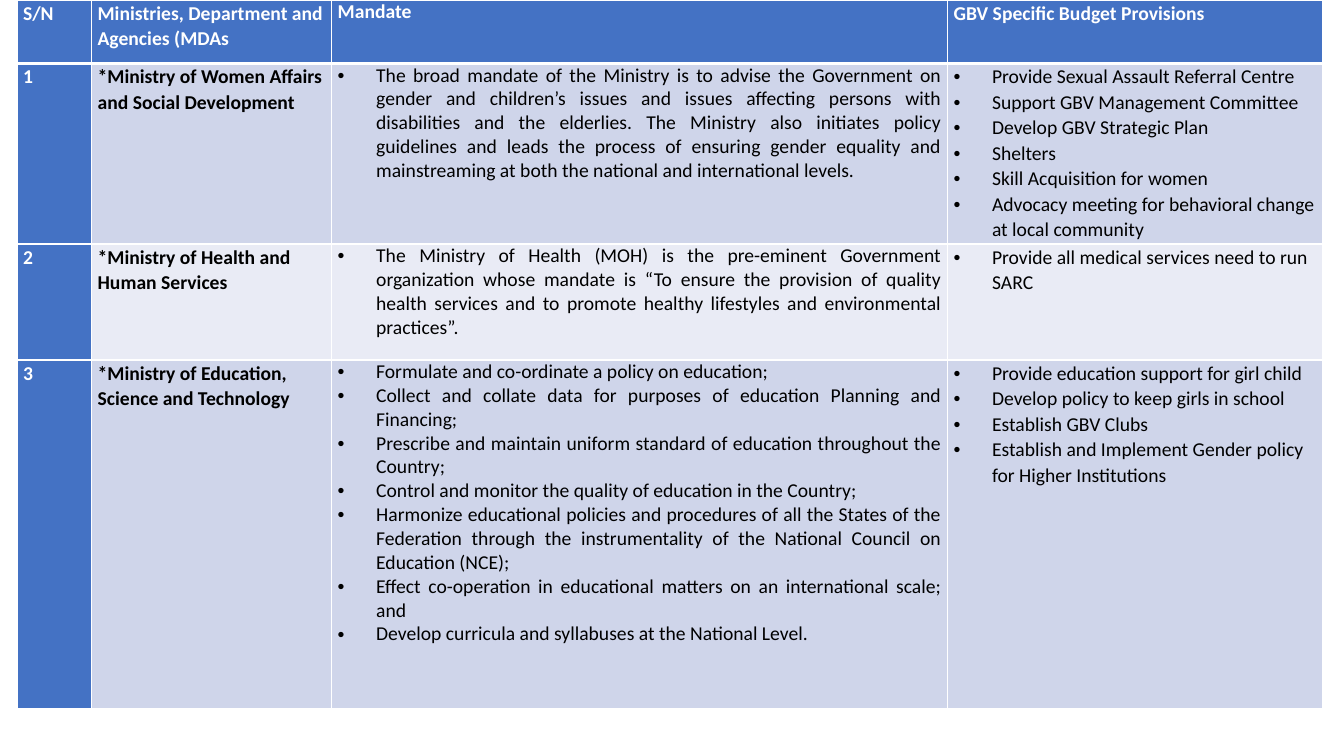
from lxml import etree
from pptx import Presentation
from pptx import util as u
from pptx.dml.color import RGBColor
from pptx.enum import text
from pptx.oxml import ns

WHITE = RGBColor(0xFF, 0xFF, 0xFF)
BLACK = RGBColor(0, 0, 0)
BLUE = RGBColor(0x44, 0x72, 0xC4)
BANDS = [RGBColor(0xCF, 0xD5, 0xEA), RGBColor(0xE9, 0xEB, 0xF5)]

COLUMN_WIDTHS = [1.88, 6.05, 15.52, 9.45]
ROW_HEIGHTS = [1.6, 4.55, 2.92, 8.79]
MANDATE_COLUMN = 2

HEADINGS = ["S/N", "Ministries, Department and Agencies (MDAs", "Mandate",
            "GBV Specific Budget Provisions"]
MINISTRIES = [
    ("*Ministry of Women Affairs and Social Development",
     ["The broad mandate of the Ministry is to advise the Government on gender and "
      "children’s issues and issues affecting persons with disabilities and the elderlies. "
      "The Ministry also initiates policy guidelines and leads the process of ensuring "
      "gender equality and mainstreaming at both the national and international levels."],
     ["Provide Sexual Assault Referral Centre",
      "Support GBV Management Committee",
      "Develop GBV Strategic Plan",
      "Shelters",
      "Skill Acquisition for women",
      "Advocacy meeting for behavioral change at local community"]),
    ("*Ministry of Health and Human Services",
     ["The Ministry of Health (MOH) is the pre-eminent Government organization whose "
      "mandate is “To ensure the provision of quality health services and to promote "
      "healthy lifestyles and environmental practices”."],
     ["Provide all medical services need to run SARC"]),
    ("*Ministry of Education, Science and Technology",
     ["Formulate and co-ordinate a policy on education;",
      "Collect and collate data for purposes of education Planning and Financing;",
      "Prescribe and maintain uniform standard of education throughout the Country;",
      "Control and monitor the quality of education in the Country;",
      "Harmonize educational policies and procedures of all the States of the Federation "
      "through the instrumentality of the National Council on Education (NCE);",
      "Effect co-operation in educational matters on an international scale; and",
      "Develop curricula and syllabuses at the National Level."],
     ["Provide education support for girl child",
      "Develop policy to keep girls in school",
      "Establish GBV Clubs",
      "Establish and Implement Gender policy for Higher Institutions"]),
]


def add_borders(cell, bottom_width):
    properties = cell._tc.get_or_add_tcPr()
    for side, width in (("L", 1), ("R", 1), ("T", 1), ("B", bottom_width)):
        line = etree.SubElement(properties, ns.qn(f"a:ln{side}"), w=str(u.Pt(width)))
        fill = etree.SubElement(line, ns.qn("a:solidFill"))
        etree.SubElement(fill, ns.qn("a:srgbClr"), val=str(WHITE))


def add_bullet(para):
    properties = para._p.get_or_add_pPr()
    properties.set("marL", str(u.Cm(0.97)))
    properties.set("indent", str(-u.Cm(0.97)))
    etree.SubElement(properties, ns.qn("a:buFont"), typeface="Arial")
    etree.SubElement(properties, ns.qn("a:buChar"), char="•")


def fill_cell(cell, lines, fill, color, bold, justified, bulleted, bottom_width):
    add_borders(cell, bottom_width)
    cell.fill.solid()
    cell.fill.fore_color.rgb = fill
    cell.margin_left = cell.margin_right = u.Cm(0.15)
    cell.margin_top = cell.margin_bottom = 0
    frame = cell.text_frame
    for index, line in enumerate(lines):
        para = frame.add_paragraph() if index else frame.paragraphs[0]
        if justified:
            para.alignment = text.PP_ALIGN.JUSTIFY
        else:
            para.line_spacing = 1.07
            para.space_after = u.Pt(8 if index == len(lines) - 1 else 0)
        if bulleted:
            add_bullet(para)
        span = para.add_run()
        span.text = line
        span.font.name = "Calibri"
        span.font.size = u.Pt(14)
        span.font.bold = bold
        span.font.color.rgb = color


def add_ministry_table(page):
    frame = page.shapes.add_table(len(ROW_HEIGHTS), len(COLUMN_WIDTHS), u.Cm(0.43), 0,
                                  u.Cm(sum(COLUMN_WIDTHS)), u.Cm(sum(ROW_HEIGHTS)))
    table = frame.table
    for column, width in zip(table.columns, COLUMN_WIDTHS):
        column.width = u.Cm(width)
    for row, height in zip(table.rows, ROW_HEIGHTS):
        row.height = u.Cm(height)

    contents = [[[heading] for heading in HEADINGS]]
    for number, (name, mandate, provisions) in enumerate(MINISTRIES, 1):
        contents.append([[str(number)], [name], mandate, provisions])

    for row, cells in enumerate(contents):
        for column, lines in enumerate(cells):
            is_heading = row == 0 or column == 0
            is_list = row > 0 and column >= MANDATE_COLUMN
            fill_cell(table.cell(row, column), lines,
                      fill=BLUE if is_heading else BANDS[(row - 1) % 2],
                      color=WHITE if is_heading else BLACK,
                      bold=not is_list,
                      justified=column == MANDATE_COLUMN,
                      bulleted=is_list,
                      bottom_width=3 if row == 0 else 1)


def main():
    deck = Presentation()
    deck.slide_width = u.Cm(33.87)
    deck.slide_height = u.Cm(19.05)
    page = deck.slides.add_slide(deck.slide_layouts[6])
    add_ministry_table(page)
    deck.save("out.pptx")


if __name__ == "__main__":
    main()
